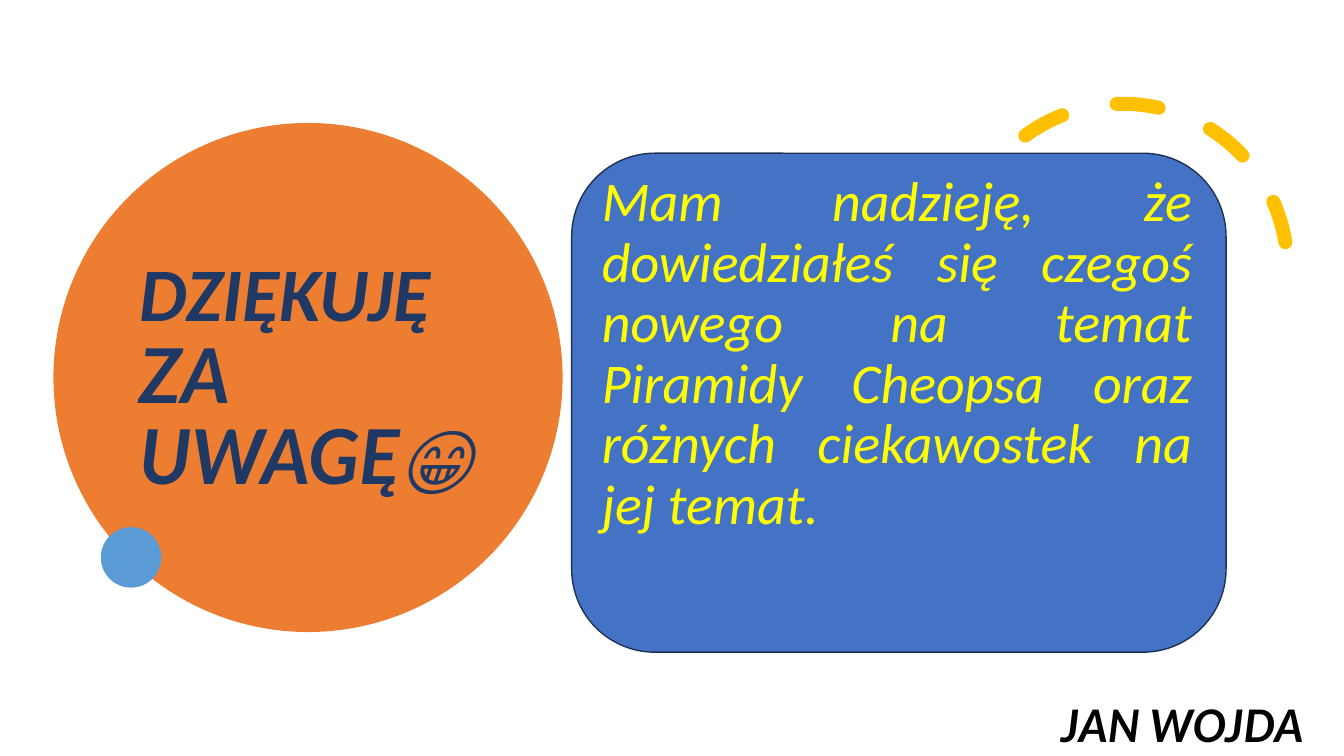
from lxml import etree
from pptx import Presentation
from pptx.dml.color import RGBColor
from pptx.enum.dml import MSO_LINE
from pptx.enum.shapes import MSO_SHAPE
from pptx.enum.text import MSO_ANCHOR, MSO_AUTO_SIZE, PP_ALIGN
from pptx.util import Inches, Pt

ELLIPSE, ARC, ROUNDED = MSO_SHAPE.OVAL, MSO_SHAPE.ARC, MSO_SHAPE.ROUNDED_RECTANGLE
DASH = MSO_LINE.DASH
TOP, MIDDLE = MSO_ANCHOR.TOP, MSO_ANCHOR.MIDDLE
LEFT, RIGHT, JUSTIFY = PP_ALIGN.LEFT, PP_ALIGN.RIGHT, PP_ALIGN.JUSTIFY
NO_FIT = MSO_AUTO_SIZE.NONE

ORANGE = RGBColor(0xED, 0x7D, 0x31)
LIGHT_BLUE = RGBColor(0x5B, 0x9B, 0xD5)
BLUE = RGBColor(0x44, 0x72, 0xC4)
OUTLINE = RGBColor(0x1E, 0x32, 0x56)
NAVY = RGBColor(0x20, 0x38, 0x64)
GOLD = RGBColor(0xFF, 0xC0, 0x00)
YELLOW = RGBColor(0xFF, 0xFF, 0x00)
BLACK = RGBColor(0, 0, 0)


def add_figure(s, kind, box, fill=None, line=None, width=1):
    sp = s.shapes.add_shape(kind, *map(Inches, box))
    sp.shadow.inherit = False
    for part, color in ((sp.fill, fill), (sp.line.fill, line)):
        if color is None:
            part.background()
        else:
            part.solid()
            part.fore_color.rgb = color
    if line is not None:
        sp.line.width = Pt(width)
    return sp


def write_text(sp, runs, size, color, bold=False, anchor=TOP, **paragraph):
    """Fill one paragraph with (text, font name) runs."""
    tf = sp.text_frame
    tf.word_wrap = True
    tf.auto_size = NO_FIT
    tf.vertical_anchor = anchor
    p = tf.paragraphs[0]
    for name, value in paragraph.items():
        setattr(p, name, value)
    for text, font in runs:
        r = p.add_run()
        r.text = text
        r.font.color.rgb = color
        style = {"name": font, "size": Pt(size), "bold": bold, "italic": True}
        for name, value in style.items():
            setattr(r.font, name, value)


def add_thanks(s, left, top, size):
    """Orange disc with the title on it and a small dot on its rim."""
    disc = add_figure(s, ELLIPSE, (left, top, size, size), ORANGE)
    title = s.shapes.title
    title.element.addprevious(disc.element)
    place = {"left": left + 0.75, "top": top + 0.31, "width": 3.54, "height": 4.45}
    for name, value in place.items():
        setattr(title, name, Inches(value))
    write_text(title, [("DZIĘKUJĘ", "Calibri"), (" ZA UWAGĘ😁", "Lato")], 54, NAVY,
               bold=True, anchor=MIDDLE, alignment=LEFT, line_spacing=0.9)
    add_figure(s, ELLIPSE, (left + 0.47, top + 4.01, 0.6, 0.6), LIGHT_BLUE)


def add_dashed_arc(s, box):
    arc = add_figure(s, ARC, box, line=GOLD, width=10)
    arc.adjustments[0], arc.adjustments[1] = 158.17, 17.81
    arc.rotation = 330.2
    arc.line.dash_style = DASH
    arc.line.fill.fore_color.rgb = GOLD
    ln = arc.element.spPr.find("{*}ln")
    ln.set("cap", "rnd")
    etree.SubElement(ln, ln[0].tag.replace("solidFill", "round"))


def add_message(s, left, top, width, height):
    add_figure(s, ROUNDED, (left, top, width, height), BLUE, OUTLINE)
    box = (left + 0.2, top + 0.15, width - 0.44, height - 0.65)
    message = s.shapes.add_textbox(*map(Inches, box))
    text = ("Mam nadzieję, że dowiedziałeś się czegoś nowego na temat "
            "Piramidy Cheopsa oraz różnych ciekawostek na jej temat.")
    write_text(message, [(text, "Calibri")], 40, YELLOW,
               alignment=JUSTIFY, line_spacing=0.9, space_before=Pt(10))


def add_author(s, box):
    author = s.shapes.add_textbox(*map(Inches, box))
    write_text(author, [("JAN WOJDA", "Lato")], 32, BLACK, bold=True, alignment=RIGHT)


def main():
    prs = Presentation()
    prs.slide_width, prs.slide_height = Inches(13.33), Inches(7.5)
    s = prs.slides.add_slide(prs.slide_layouts[5])
    add_dashed_arc(s, (9.5, 1.03, 3.27, 3.27))
    add_thanks(s, 0.53, 1.22, 5.05)
    add_message(s, 5.67, 1.52, 6.49, 4.95)
    add_author(s, (0.53, 6.87, 12.5, 0.64))
    prs.save("out.pptx")


if __name__ == "__main__":
    main()
